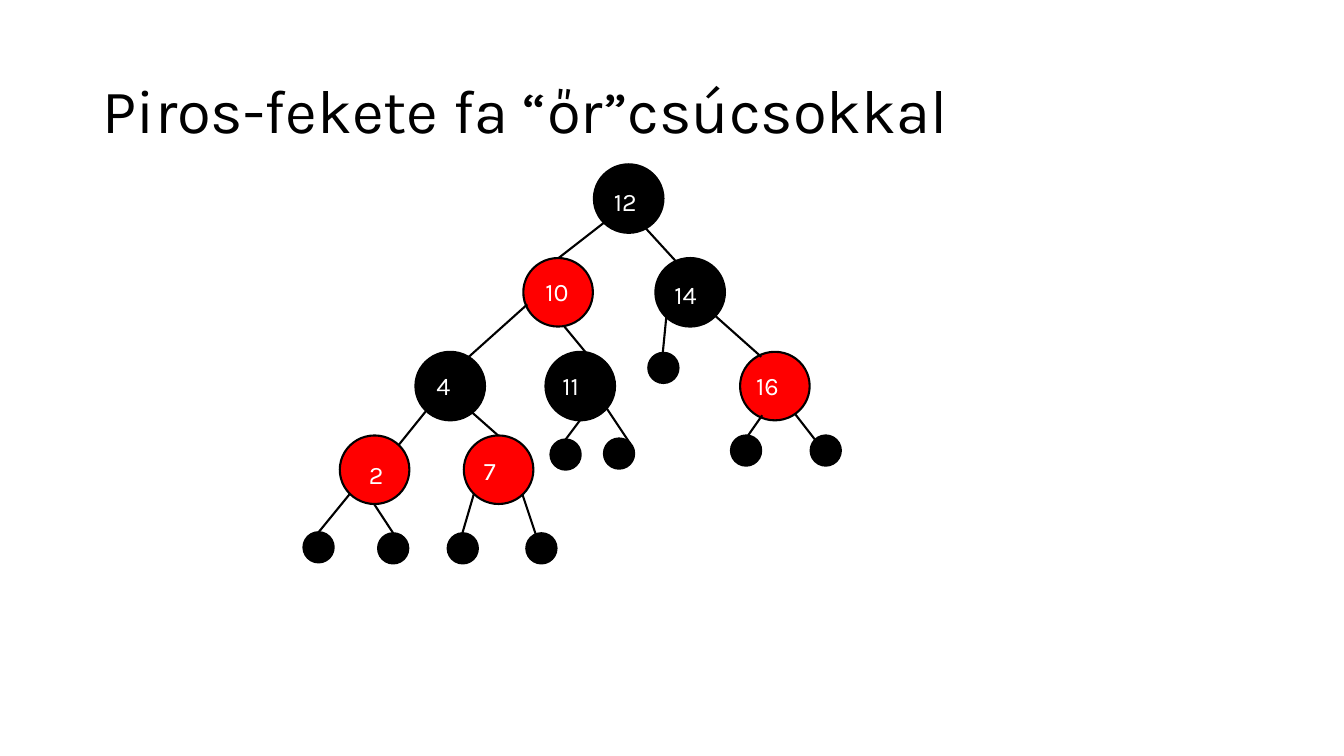
"""Build a slide showing a red-black tree with sentinel leaves."""
from pptx import Presentation
from pptx.dml.color import RGBColor
from pptx.enum.shapes import MSO_CONNECTOR as Connector, MSO_SHAPE as Shape
from pptx.enum.text import MSO_ANCHOR as Anchor
from pptx.oxml.ns import qn
from pptx.util import Pt
from lxml import etree

PX = 9144
BLACK, RED, WHITE = "000000", "FF0000", "FFFFFF"


def color(value):
    return RGBColor.from_string(value)


def add_text(page, words, bounds, size, ink, frame_format, para_format):
    box = page.shapes.add_textbox(*[value * PX for value in bounds])
    frame = box.text_frame
    for name, value in frame_format.items():
        setattr(frame, name, value)
    para = frame.paragraphs[0]
    for name, value in para_format.items():
        setattr(para, name, value)
    span = para.add_run()
    span.text = words
    for name, value in {"name": "Karla", "size": Pt(size)}.items():
        setattr(span.font, name, value)
    span.font.color.rgb = color(ink)


deck = Presentation()
deck.slide_width, deck.slide_height = 1333 * PX, 750 * PX
page = deck.slides.add_slide(deck.slide_layouts[6])

add_text(page, "Piros-fekete fa “őr”csúcsokkal", (92, 40, 1150, 145), 44, BLACK,
         {"word_wrap": True, "vertical_anchor": Anchor.MIDDLE}, {"line_spacing": 0.9})

nodes = [
    ("12", 589, 163, BLACK, 599, 180),
    ("10", 519, 256, RED, 531, 269),
    ("14", 650, 256, BLACK, 659, 272),
    ("4", 412, 349, BLACK, 423, 362),
    ("11", 541, 349, BLACK, 548, 362),
    ("16", 734, 349, RED, 740, 362),
    ("2", 337, 432, RED, 356, 451),
    ("7", 460, 432, RED, 470, 447),
]
leaves = [
    (301, 528), (375, 529), (444, 529), (522, 529), (546, 436),
    (599, 435), (643, 350), (804, 432), (725, 432),
]
edges = [
    (599, 221, 554, 256), (640, 226, 672, 261),
    (523, 302, 465, 354), (559, 323, 592, 363),
    (709, 313, 755, 354), (661, 313, 657, 354),
    (424, 406, 395, 442), (468, 409, 494, 432),
    (576, 416, 561, 436), (601, 404, 625, 440),
    (756, 412, 742, 432), (788, 410, 809, 437),
    (347, 490, 316, 528), (371, 500, 390, 529),
    (470, 490, 458, 531), (518, 490, 532, 532),
]

circles = [(left, top, 69, 68, fill) for _, left, top, fill, _, _ in nodes]
circles += [(left, top, 30, 30, BLACK) for left, top in leaves]
for *bounds, fill in circles:
    circle = page.shapes.add_shape(Shape.OVAL, *[value * PX for value in bounds])
    circle.shadow.inherit = False
    circle.fill.solid()
    circle.fill.fore_color.rgb = color(fill)
    circle.line.color.rgb = color(BLACK)
    circle.line.width = Pt(1.5)

for ends in edges:
    edge = page.shapes.add_connector(Connector.STRAIGHT, *[value * PX for value in ends])
    edge.line.color.rgb = color(BLACK)
    edge.line.width = Pt(1.5)
    etree.SubElement(edge._element.spPr, qn("a:effectLst"))

for label, _, _, _, left, top in nodes:
    add_text(page, label, (left, top, 62, 40), 18, WHITE, {"word_wrap": True}, {})

deck.save("out.pptx")
